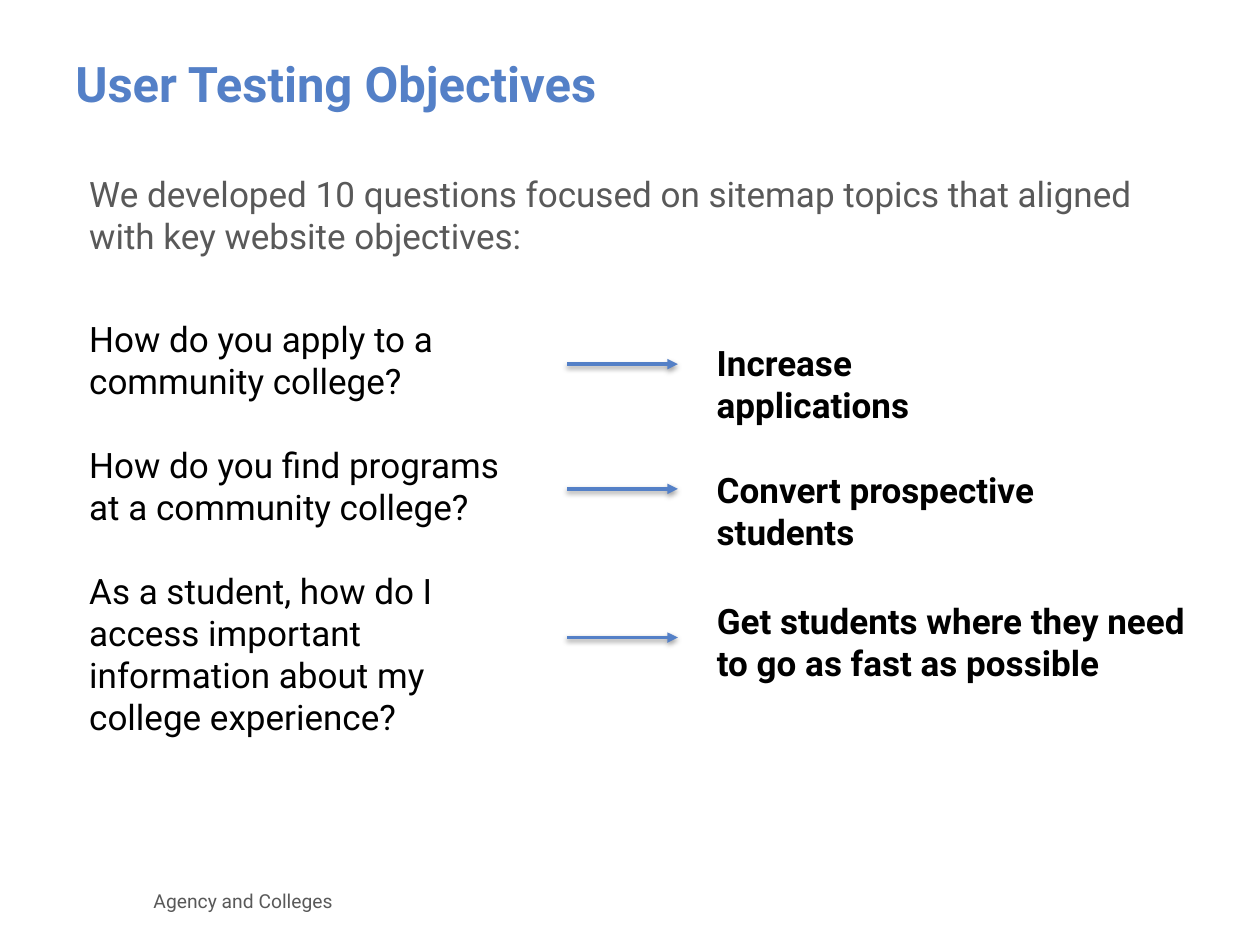
import pptx
import pptx.dml.color
import pptx.enum.shapes
import pptx.enum.text
import pptx.oxml
import pptx.oxml.ns
import pptx.util

Inches = pptx.util.Inches
Pt = pptx.util.Pt
ANCHOR = pptx.enum.text.MSO_ANCHOR

BLUE, GRAY, BLACK = "5480C7", "595959", "000000"
RESULT_LEFT = 5.59
QUESTIONS = [
    "How do you apply to a community college?",
    "How do you find programs at a community college?",
    "As a student, how do I access important information about my college experience?",
]
RESULTS = [
    ("Increase applications", 2.66, 2.74, 0.44, 2.89),
    ("Convert prospective students", 3.67, 3.76, 0.44, 3.88),
    ("Get students where they need to go as fast as possible", 4.71, 3.99, 0.77, 5.06),
]
SHADOW = (
    '<a:effectLst %s><a:outerShdw blurRad="%d" dist="%d" dir="5400000" rotWithShape="0">'
    '<a:srgbClr val="000000"><a:alpha val="38000"/></a:srgbClr>'
    "</a:outerShdw></a:effectLst>"
)


def rgb(value):
    return pptx.dml.color.RGBColor.from_string(value)


def add_text(s, box, paragraphs, color, size=20, bold=False, anchor=ANCHOR.TOP, gap=0):
    tf = s.shapes.add_textbox(*map(Inches, box)).text_frame
    tf.word_wrap = True
    tf.vertical_anchor = anchor
    font = {"name": "Roboto", "size": Pt(size), "bold": bold}
    for i, text in enumerate(paragraphs):
        p = tf.add_paragraph() if i else tf.paragraphs[0]
        p.space_before = Pt(gap if i else 0)
        r = p.add_run()
        r.text = text
        for name, value in font.items():
            setattr(r.font, name, value)
        r.font.color.rgb = rgb(color)


def add_arrow(s, left, right, y):
    sp = s.shapes.add_connector(
        pptx.enum.shapes.MSO_CONNECTOR.STRAIGHT,
        Inches(left), Inches(y), Inches(right), Inches(y),
    )
    sp.line.color.rgb = rgb(BLUE)
    sp.line.width = Pt(2)
    ns = pptx.oxml.ns.nsdecls("a")
    ln = sp.line._get_or_add_ln()
    ln.append(pptx.oxml.parse_xml('<a:tailEnd %s type="triangle"/>' % ns))
    effect = SHADOW % (ns, Pt(3.1), Pt(1.6))
    sp._element.spPr.append(pptx.oxml.parse_xml(effect))


def main():
    prs = pptx.Presentation()
    prs.slide_width, prs.slide_height = Inches(10), Inches(7.5)
    s = prs.slides.add_slide(prs.slide_layouts[6])

    add_text(s, (0.5, 0.3, 9, 0.71), ["User Testing Objectives"], BLUE,
             size=28, bold=True, anchor=ANCHOR.MIDDLE)
    add_text(s, (0.61, 1.32, 8.84, 0.86),
             ["We developed 10 questions focused on sitemap topics "
              "that aligned with key website objectives:"], GRAY)
    add_text(s, (0.61, 2.47, 3.74, 3.47), QUESTIONS, BLACK, gap=24)
    for text, top, width, height, arrow_y in RESULTS:
        add_text(s, (RESULT_LEFT, top, width, height), [text], BLACK, bold=True)
        add_arrow(s, 4.5, 5.38, arrow_y)
    add_text(s, (1.12, 6.95, 4.9, 0.4), ["Agency and Colleges"], GRAY,
             size=11, anchor=ANCHOR.MIDDLE)

    prs.save("out.pptx")


if __name__ == "__main__":
    main()
